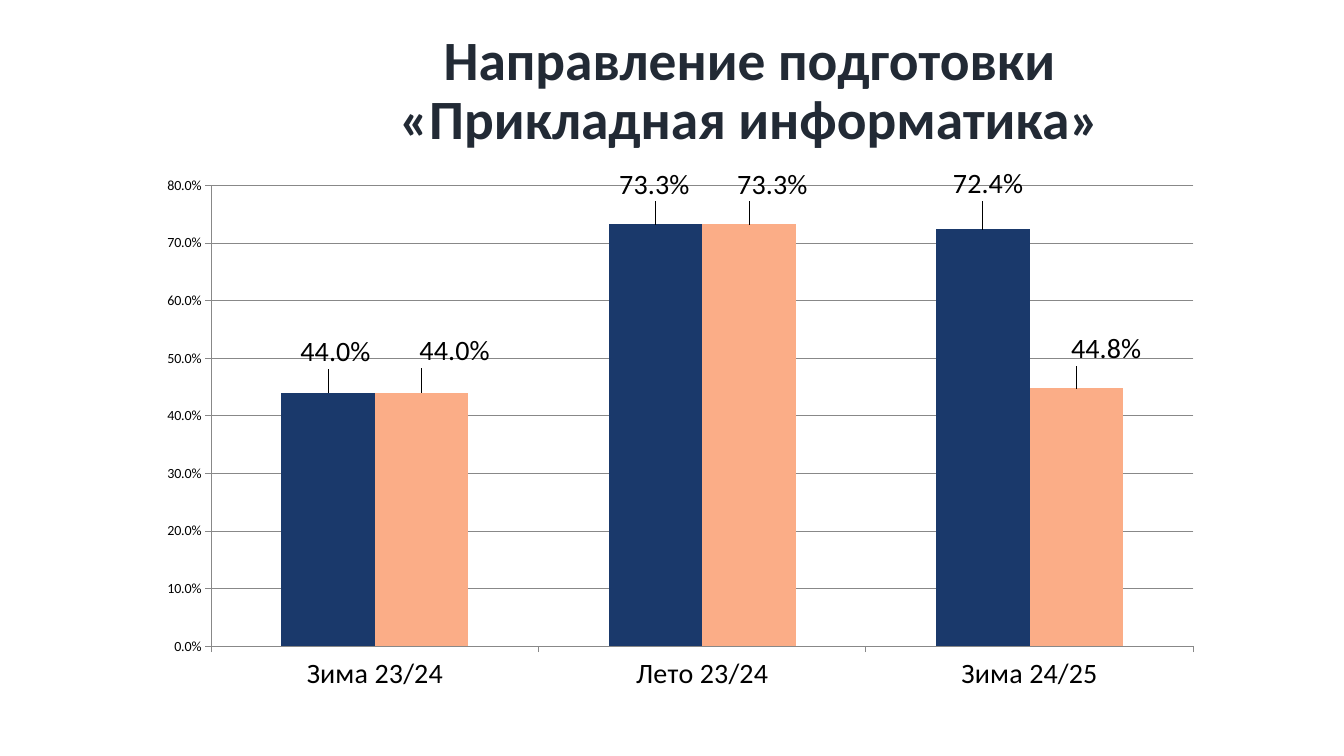
"""Build the slide with the results chart for applied informatics."""
from lxml.etree import SubElement
from pptx import Presentation
from pptx.chart.data import CategoryChartData
from pptx.dml.color import RGBColor
from pptx.enum.chart import XL_CHART_TYPE, XL_LABEL_POSITION, XL_TICK_MARK
from pptx.enum.text import MSO_ANCHOR, PP_ALIGN
from pptx.oxml.ns import qn
from pptx.util import Pt

TITLE = "Направление подготовки\v«Прикладная информатика»"
TERMS = ["Зима 23/24", "Лето 23/24", "Зима 24/25"]
NAVY = RGBColor(0x1A, 0x39, 0x6B)
PEACH = RGBColor(0xFB, 0xAD, 0x87)
SLATE = RGBColor(0x22, 0x2A, 0x35)
GRAY = RGBColor(0x88, 0x88, 0x88)
BLACK = RGBColor(0, 0, 0)
FACE = "Calibri"
RATE = "0.0%"
SERIES = [
    ("Series 1", NAVY, [0.44, 0.733, 0.724], [(8, -20), (-1, -18), (5, -24)]),
    ("Series 2", PEACH, [0.44, 0.733, 0.448], [(33, -21), (23, -18), (30, -18)]),
]
SPAN = (1067, 535)
PLOT = {"x": 0.061, "y": 0.036, "w": 0.92, "h": 0.861}


def style(font, size, color=BLACK, bold=False):
    font.name, font.size, font.bold = FACE, Pt(size), bold
    font.color.rgb = color


def layout(parent, index, items):
    node = SubElement(parent, qn("c:layout"))
    parent.insert(index, node)
    manual = SubElement(node, qn("c:manualLayout"))
    for tag, value in items:
        SubElement(manual, qn("c:" + tag)).set("val", str(value))


def rule(line):
    line.color.rgb, line.width = GRAY, Pt(0.75)


def add_title(slide):
    box = slide.shapes.add_textbox(Pt(177), Pt(58.3), Pt(717), Pt(61.2))
    frame = box.text_frame
    frame.word_wrap = True
    frame.vertical_anchor = MSO_ANCHOR.BOTTOM
    frame.margin_bottom = Pt(11)
    frame.text = TITLE
    para = frame.paragraphs[0]
    para.alignment, para.line_spacing = PP_ALIGN.CENTER, 0.9
    style(para.font, 39.6, SLATE, True)


def add_bars(slide):
    data = CategoryChartData(number_format=RATE)
    data.categories = TERMS
    for name, _, values, _ in SERIES:
        data.add_series(name, values)
    chart = slide.shapes.add_chart(
        XL_CHART_TYPE.COLUMN_CLUSTERED, Pt(104.4), Pt(118.8), Pt(762.5), Pt(382.3), data
    ).chart
    chart.has_legend = chart.has_title = False
    style(chart.font, 10)

    for axis, size in ((chart.category_axis, 20), (chart.value_axis, 10)):
        style(axis.tick_labels.font, size)
        rule(axis.format.line)
        axis.major_tick_mark = XL_TICK_MARK.OUTSIDE
        axis.minor_tick_mark = XL_TICK_MARK.NONE
    rates = chart.value_axis
    rates.minimum_scale, rates.maximum_scale, rates.major_unit = 0, 0.8, 0.1
    rates.tick_labels.number_format = RATE
    rates.tick_labels.number_format_is_linked = False
    rates.has_major_gridlines = True
    rule(rates.major_gridlines.format.line)

    plot = chart.plots[0]
    plot.gap_width, plot.overlap, plot.vary_by_categories = 150, 0, False
    for bars, (_, color, _, shifts) in zip(plot.series, SERIES):
        bars.format.fill.solid()
        bars.format.fill.fore_color.rgb = color
        bars.invert_if_negative = False
        labels = bars.data_labels
        labels.show_value = True
        labels.number_format, labels.number_format_is_linked = RATE, False
        labels.position = XL_LABEL_POSITION.OUTSIDE_END
        style(labels.font, 20)
        for i, shift in enumerate(shifts):
            label = bars.points[i].data_label
            style(label.font, 20)
            label.position = XL_LABEL_POSITION.OUTSIDE_END
            node = labels._element.findall(qn("c:dLbl"))[i]
            layout(node, 1, [(k, round(d / s, 3)) for k, d, s in zip("xy", shift, SPAN)])

    area = chart._chartSpace.chart.plotArea
    for old in area.findall(qn("c:layout")):
        area.remove(old)
    modes = [("layoutTarget", "inner"), ("xMode", "edge"), ("yMode", "edge")]
    layout(area, 0, modes + list(PLOT.items()))


def main():
    deck = Presentation()
    deck.slide_width, deck.slide_height = Pt(960), Pt(540)
    slide = deck.slides.add_slide(deck.slide_layouts[6])
    add_title(slide)
    add_bars(slide)
    deck.save("out.pptx")


if __name__ == "__main__":
    main()
